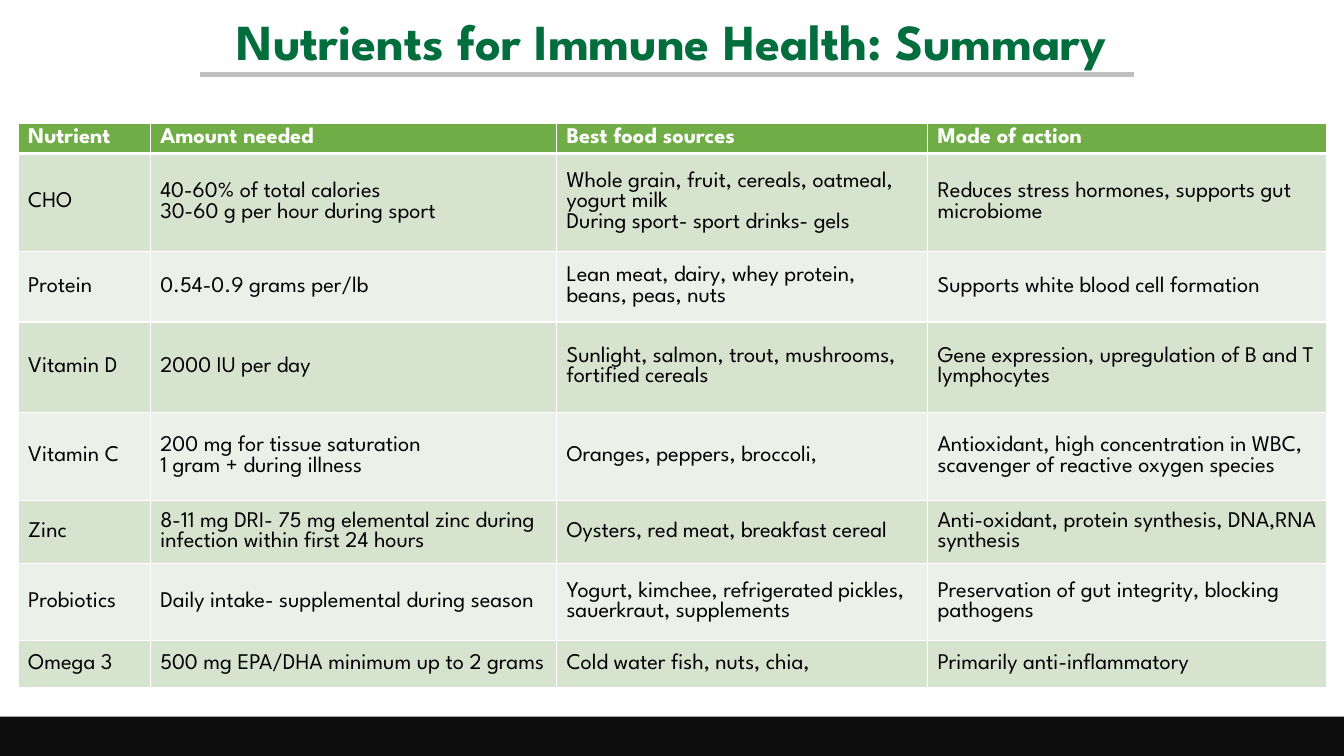
from lxml import etree
from pptx import Presentation
from pptx.dml.color import RGBColor
from pptx.enum.shapes import MSO_CONNECTOR, MSO_SHAPE
from pptx.enum.text import MSO_ANCHOR, MSO_AUTO_SIZE, PP_ALIGN
from pptx.oxml.ns import qn
from pptx.util import Inches, Pt

STRAIGHT, RECTANGLE = MSO_CONNECTOR.STRAIGHT, MSO_SHAPE.RECTANGLE
TOP, MIDDLE, BOTTOM = MSO_ANCHOR.TOP, MSO_ANCHOR.MIDDLE, MSO_ANCHOR.BOTTOM
CENTER, NO_AUTOFIT = PP_ALIGN.CENTER, MSO_AUTO_SIZE.NONE

TITLE = "Nutrients for Immune Health: Summary"
HEADER = ("Nutrient", "Amount needed", "Best food sources", "Mode of action")
NUTRIENTS = [
    ("CHO", "40-60% of total calories\n30-60 g per hour during sport",
     "Whole grain, fruit, cereals, oatmeal, yogurt milk\nDuring sport- sport drinks- gels",
     "Reduces stress hormones, supports gut microbiome"),
    ("Protein", "0.54-0.9 grams per/lb",
     "Lean meat, dairy, whey protein, beans, peas, nuts",
     "Supports white blood cell formation"),
    ("Vitamin D", "2000 IU per day",
     "Sunlight, salmon, trout, mushrooms, fortified cereals",
     "Gene expression, upregulation of B and T lymphocytes"),
    ("Vitamin C", "200 mg for tissue saturation\n1 gram + during illness",
     "Oranges, peppers, broccoli,",
     "Antioxidant, high concentration in WBC, scavenger of reactive oxygen species"),
    ("Zinc", "8-11 mg DRI- 75 mg elemental zinc during infection within first 24 hours",
     "Oysters, red meat, breakfast cereal",
     "Anti-oxidant, protein synthesis, DNA,RNA synthesis"),
    ("Probiotics", "Daily intake- supplemental during season",
     "Yogurt, kimchee, refrigerated pickles, sauerkraut, supplements",
     "Preservation of gut integrity, blocking pathogens"),
    ("Omega 3", "500 mg EPA/DHA minimum up to 2 grams",
     "Cold water fish, nuts, chia,", "Primarily anti-inflammatory"),
]
COLUMN_WIDTHS = (1.31, 4.03, 3.68, 3.96)
ROW_HEIGHTS = (0.3, 0.97, 0.7, 0.9, 0.87, 0.63, 0.76, 0.47)
FONT = "League Spartan"
WIDTH, HEIGHT = 13.33, 7.5
BAR_HEIGHT = 0.39
BANDS = ("EBF1E9", "D5E3CF")


def color(value):
    return RGBColor.from_string(value)


def style_text(frame, size, value, bold):
    for para in frame.paragraphs:
        para.font.name = FONT
        para.font.size = Pt(size)
        para.font.bold = bold
        para.font.color.rgb = color(value)


def add_borders(cell, bottom):
    properties = cell._tc.get_or_add_tcPr()
    for side, points in (("lnL", 1), ("lnR", 1), ("lnT", 1), ("lnB", bottom)):
        line = etree.SubElement(properties, qn("a:" + side), w=str(Pt(points)))
        fill = etree.SubElement(line, qn("a:solidFill"))
        etree.SubElement(fill, qn("a:srgbClr"), val="FFFFFF")


def add_title(page):
    title = page.shapes.title
    title.left, title.top = 0, Inches(0.04)
    title.width, title.height = Inches(WIDTH), Inches(0.71)
    frame = title.text_frame
    frame.text = TITLE
    frame.word_wrap = True
    frame.auto_size = NO_AUTOFIT
    frame.vertical_anchor = BOTTOM
    frame.paragraphs[0].alignment = CENTER
    style_text(frame, 36, "036E3D", True)


def add_footer_bar(page):
    bar = page.shapes.add_shape(RECTANGLE, 0, Inches(HEIGHT - BAR_HEIGHT),
                                Inches(WIDTH), Inches(BAR_HEIGHT))
    bar.shadow.inherit = False
    bar.fill.solid()
    bar.fill.fore_color.rgb = color("0D0D0D")
    bar.line.fill.background()


def add_nutrient_table(page):
    rows = [HEADER] + NUTRIENTS
    table = page.shapes.add_table(
        len(rows), len(HEADER), Inches(0.18), Inches(1.22),
        Inches(sum(COLUMN_WIDTHS)), Inches(sum(ROW_HEIGHTS))).table
    for column, width in zip(table.columns, COLUMN_WIDTHS):
        column.width = Inches(width)
    for index, (row, height, texts) in enumerate(zip(table.rows, ROW_HEIGHTS, rows)):
        row.height = Inches(height)
        heading = index == 0
        for cell, text in zip(row.cells, texts):
            add_borders(cell, 3 if heading or index == 0 else 1)
            cell.fill.solid()
            cell.fill.fore_color.rgb = color("70AD47" if heading else BANDS[index % 2])
            cell.vertical_anchor = TOP if heading else MIDDLE
            cell.text = text
            style_text(cell.text_frame, 16, "FFFFFF" if heading else "000000", heading)


def add_title_rule(page):
    rule = page.shapes.add_connector(STRAIGHT, Inches(1.98), Inches(0.74),
                                     Inches(11.25), Inches(0.74))
    rule.line.color.rgb = color("BFBFBF")
    rule.line.width = Pt(3)
    etree.SubElement(rule._element.spPr, qn("a:effectLst"))


def main():
    deck = Presentation()
    deck.slide_width, deck.slide_height = Inches(WIDTH), Inches(HEIGHT)
    page = deck.slides.add_slide(deck.slide_layouts[5])
    add_title(page)
    add_footer_bar(page)
    add_nutrient_table(page)
    add_title_rule(page)
    deck.save("out.pptx")


if __name__ == "__main__":
    main()
